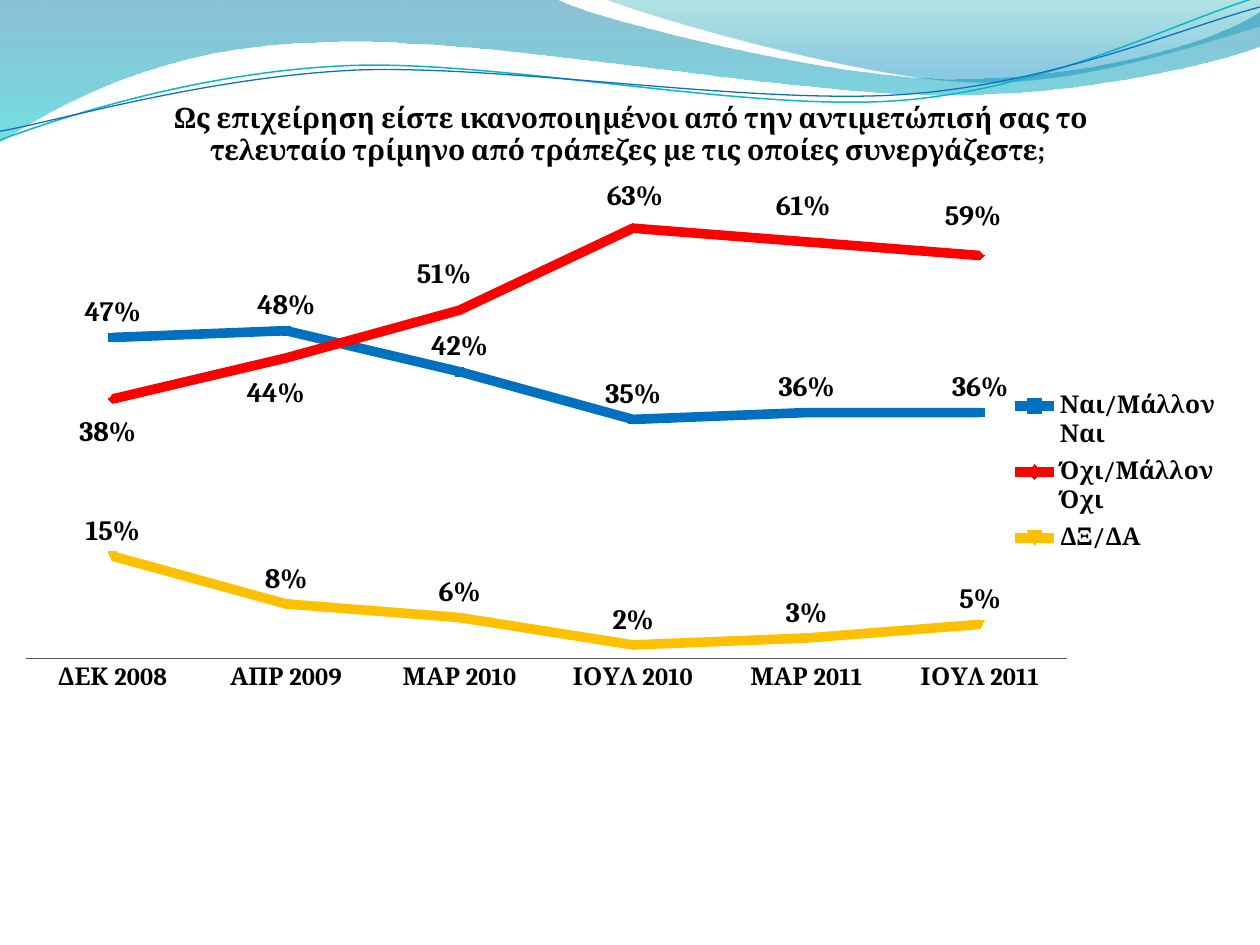
"""Build the slide on how satisfied businesses are with their banks."""
import dataclasses

import pptx
import pptx.chart.data
import pptx.dml.color
import pptx.enum.chart
import pptx.oxml
import pptx.oxml.ns
import pptx.util

Pt = pptx.util.Pt
qn = pptx.oxml.ns.qn
POS = pptx.enum.chart.XL_LABEL_POSITION


@dataclasses.dataclass(frozen=True)
class Theme:
    font: str = "Cambria"
    text: str = "000000"
    axis: str = "595959"
    yes: str = "0070C0"
    no: str = "FF0000"
    unsure: str = "FFC000"
    teal_line: str = "0AB8BF"
    blue_line: str = "0F6FC6"
    wave: tuple = ((0, "0074A1", 45), (1, "00C6CF", 55))
    crest: tuple = ((0, "00A1A9", 30), (0.8, "008BBF", 45))
    large: int = 16
    small: int = 14
    series_width: float = 5.5


def rgb(value):
    return pptx.dml.color.RGBColor.from_string(value)


def element(tag, **attrs):
    el = pptx.oxml.parse_xml(f"<{tag} {pptx.oxml.ns.nsdecls(tag.split(':')[0])}/>")
    for name, value in attrs.items():
        el.set(name, str(value))
    return el


def bend(sp, segments):
    lines = iter(list(sp._element.iter(qn("a:lnTo"))))
    for segment in segments:
        first = next(lines)
        if len(segment) == 3:
            cubic = element("a:cubicBezTo")
            first.addprevious(cubic)
            for line in (first, next(lines), next(lines)):
                cubic.append(line[0])
                line.getparent().remove(line)


def set_layout(parent, index, **values):
    for old in parent.findall(qn("c:layout")):
        parent.remove(old)
    layout, manual = element("c:layout"), element("c:manualLayout")
    layout.append(manual)
    for name, value in values.items():
        manual.append(element(f"c:{name}", val=value))
    parent.insert(index, layout)


class Builder:
    def __init__(self, prs, theme):
        self.theme = theme
        self.s = prs.slides.add_slide(prs.slide_layouts[6])

    def outline(self, path, closed):
        points = [(Pt(x), Pt(y)) for segment in path for x, y in segment]
        fb = self.s.shapes.build_freeform(*points[0], scale=1.0)
        fb.add_line_segments(points[1:], close=closed)
        sp = fb.convert_to_shape()
        bend(sp, path[1:])
        sp.shadow.inherit = False
        return sp

    def wave(self, path, stops):
        sp = self.outline(path, True)
        sp.line.fill.background()
        sp.fill.gradient()
        sp.fill.gradient_angle = 270
        for stop, (position, color, _) in zip(sp.fill.gradient_stops, stops):
            stop.position = position
            stop.color.rgb = rgb(color)
        for clr, (_, _, alpha) in zip(sp._element.spPr.iter(qn("a:srgbClr")), stops):
            clr.append(element("a:alpha", val=alpha * 1000))

    def curve(self, path, color, width):
        sp = self.outline(path, False)
        sp.fill.background()
        sp.line.color.rgb = rgb(color)
        sp.line.width = Pt(width)

    def style(self, font, size):
        font.name = self.theme.font
        font.size = Pt(size)
        font.bold = True
        font.color.rgb = rgb(self.theme.text)

    def line_chart(self, title, cats, series, box, top):
        data = pptx.chart.data.CategoryChartData(number_format="0%")
        data.categories = cats
        for name, values, _ in series:
            data.add_series(name, values)
        chart = self.s.shapes.add_chart(
            pptx.enum.chart.XL_CHART_TYPE.LINE_MARKERS, *map(Pt, box), data).chart
        self.style(chart.font, self.theme.small)
        chart.has_title = True
        p = chart.chart_title.text_frame.paragraphs[0]
        p.text = title
        self.style(p.font, self.theme.large)
        self.axes(chart, top)
        chart.has_legend = True
        chart.legend.position = pptx.enum.chart.XL_LEGEND_POSITION.RIGHT
        chart.legend.include_in_layout = False
        self.style(chart.legend.font, self.theme.small)
        set_layout(chart.legend._element, 1, xMode="edge", yMode="edge",
                   x=0.81, y=0.47, w=0.18, h=0.27)
        set_layout(chart._chartSpace.chart.plotArea, 0, layoutTarget="inner",
                   xMode="edge", yMode="edge", x=0, y=0.16, w=0.86, h=0.73)
        for ser, (_, _, color) in zip(chart.plots[0].series, series):
            self.series(ser, color)
        return chart

    def axes(self, chart, top):
        none = pptx.enum.chart.XL_TICK_MARK.NONE
        chart.category_axis.major_tick_mark = none
        chart.category_axis.format.line.color.rgb = rgb(self.theme.axis)
        chart.category_axis.format.line.width = Pt(0.75)
        self.style(chart.category_axis.tick_labels.font, self.theme.small)
        axis = chart.value_axis
        axis.minimum_scale, axis.maximum_scale = 0, top
        axis.has_major_gridlines = False
        axis.visible = False

    def series(self, ser, color):
        ser.smooth = False
        ser.format.line.color.rgb = rgb(color)
        ser.format.line.width = Pt(self.theme.series_width)
        ser.marker.style = pptx.enum.chart.XL_MARKER_STYLE.AUTOMATIC
        ser.marker.size = 5
        ser.marker.format.fill.solid()
        ser.marker.format.fill.fore_color.rgb = rgb(color)
        ser.marker.format.line.color.rgb = rgb(color)
        labels = ser.data_labels
        labels.show_value = True
        labels.number_format = "0%"
        labels.number_format_is_linked = False
        labels.position = POS.ABOVE
        self.style(labels.font, self.theme.large)
        for leader in ser._element.iter(qn("c:showLeaderLines")):
            leader.set("val", "0")

    def shift_labels(self, ser, box, shifts):
        for i, (position, _, _) in enumerate(shifts):
            label = ser.points[i].data_label
            self.style(label.font, self.theme.large)
            label.position = position
        for el, (_, dx, dy) in zip(ser._element.iter(qn("c:dLbl")), shifts):
            set_layout(el, 1, x=round(dx / box[2], 4), y=round(dy / box[3], 4))


def main():
    prs = pptx.Presentation()
    prs.slide_width, prs.slide_height = Pt(720), Pt(540)
    theme = Theme()
    b = Builder(prs, theme)
    b.wave([[(0, -1)], [(317, -1)],
            [(343, 12), (478, 45), (546, 45)], [(614, 45), (690, 27), (720, 6.5)],
            [(721, 26)], [(708, 32), (626, 55), (537, 54)],
            [(448, 54), (275, 20), (185, 24)], [(93, 25), (33, 60), (-1, 81.5)]], theme.wave)
    b.wave([[(345, -1)], [(366, 8), (491, 45), (554, 47)],
            [(616, 50), (692, 23), (720, 15)], [(720, -1)]], theme.crest)
    b.curve([[(0, 80)], [(35, 67), (114, 41), (199, 37.5)],
             [(284, 34), (427, 64), (513, 57.5)],
             [(600, 51), (675, 11), (718.5, -1.5)]], theme.teal_line, 0.85)
    b.curve([[(0, 75)], [(34, 69), (118, 44), (204, 40)],
             [(290, 37), (430, 60), (516, 54)],
             [(602, 48), (678, 15), (720, 4)]], theme.blue_line, 0.75)
    box = (14.4, 43.2, 692, 374.4)
    chart = b.line_chart(
        "Ως επιχείρηση είστε ικανοποιημένοι από την αντιμετώπισή σας το "
        "τελευταίο τρίμηνο από τράπεζες με τις οποίες συνεργάζεστε; ",
        ["ΔΕΚ 2008", "ΑΠΡ 2009", "ΜΑΡ 2010", "ΙΟΥΛ 2010", "ΜΑΡ 2011", "ΙΟΥΛ 2011"],
        [("Ναι/Μάλλον Ναι", (0.47, 0.48, 0.42, 0.35, 0.36, 0.36), theme.yes),
         ("Όχι/Μάλλον Όχι", (0.38, 0.44, 0.51, 0.63, 0.61, 0.59), theme.no),
         ("ΔΞ/ΔΑ", (0.15, 0.08, 0.06, 0.02, 0.03, 0.05), theme.unsure)],
        box, 0.7)
    b.shift_labels(chart.plots[0].series[1], box, [
        (POS.BELOW, -3, 5), (POS.BELOW, -6, 6), (POS.ABOVE, -9, -6),
        (POS.ABOVE, 1, -4), (POS.ABOVE, -2, -6), (POS.ABOVE, -4, -8)])
    prs.save("out.pptx")


if __name__ == "__main__":
    main()
